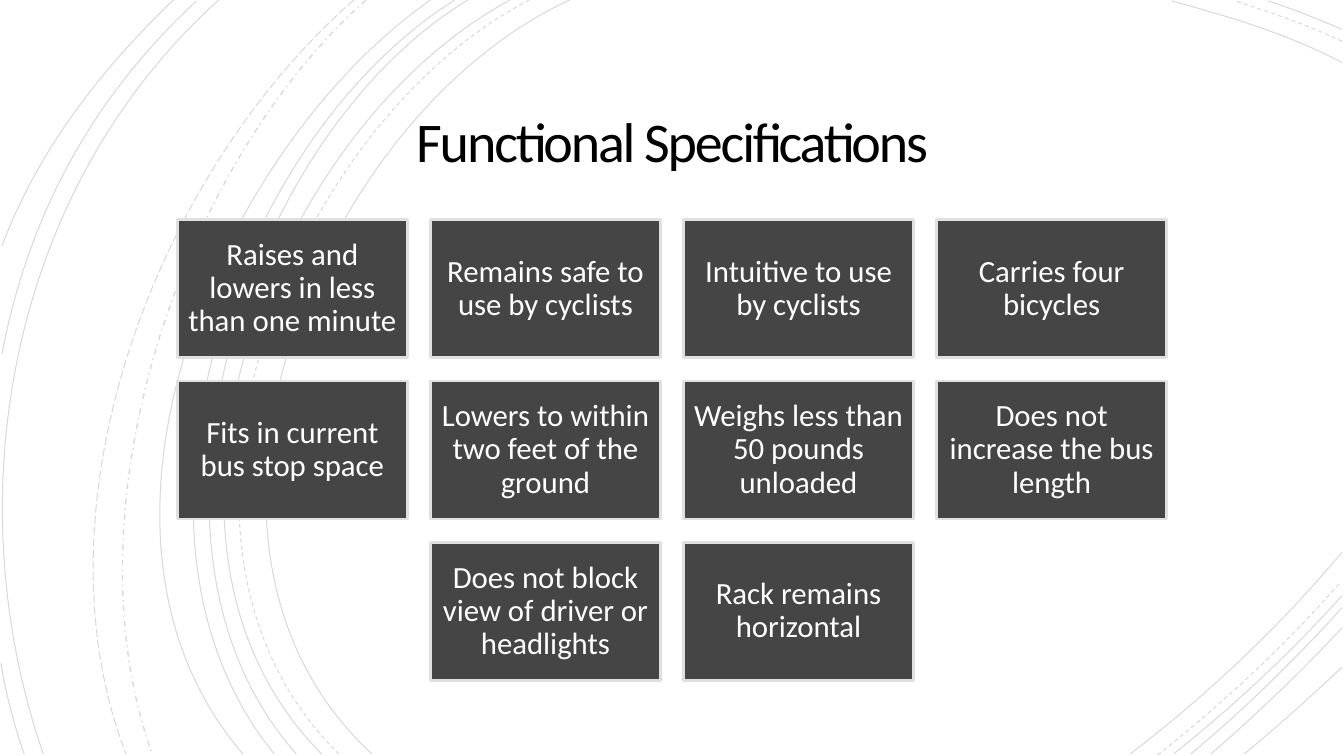
from dataclasses import dataclass

from lxml.etree import SubElement
from pptx import Presentation
from pptx.dml.color import RGBColor
from pptx.enum.dml import MSO_LINE
from pptx.enum.shapes import MSO_SHAPE
from pptx.enum.text import MSO_ANCHOR, MSO_AUTO_SIZE, PP_ALIGN
from pptx.oxml.ns import qn
from pptx.util import Inches, Pt


@dataclass(frozen=True)
class Theme:
    font: str = "Calibri"
    ink: RGBColor = RGBColor(0x00, 0x00, 0x00)
    card_fill: RGBColor = RGBColor(0x45, 0x45, 0x45)
    card_line: RGBColor = RGBColor(0xE0, 0xE0, 0xE0)
    card_text: RGBColor = RGBColor(0xFF, 0xFF, 0xFF)
    title_size: Pt = Pt(40)
    card_size: Pt = Pt(22)
    arc_opacity: int = 15


theme = Theme()


def format_text(shape, inset, line_spacing, size, color):
    frame = shape.text_frame
    frame.word_wrap = True
    frame.auto_size = MSO_AUTO_SIZE.NONE
    frame.vertical_anchor = MSO_ANCHOR.MIDDLE
    frame.margin_left = frame.margin_right = inset
    frame.margin_top = frame.margin_bottom = inset
    paragraph = frame.paragraphs[0]
    paragraph.alignment = PP_ALIGN.CENTER
    paragraph.line_spacing = line_spacing
    paragraph.font.name = theme.font
    paragraph.font.size = size
    paragraph.font.color.rgb = color


def add_arc(shapes, points, dash, width):
    """Draw one cubic curve from its start, two control points and end, in inches."""
    start, *others = [(Inches(x), Inches(y)) for x, y in points]
    builder = shapes.build_freeform(*start)
    builder.add_line_segments(others, close=False)
    arc = builder.convert_to_shape()
    segments = arc._element.xpath(".//a:lnTo")
    curve = SubElement(segments[0].getparent(), qn("a:cubicBezTo"))
    for segment in segments:
        curve.append(segment[0])
        segment.getparent().remove(segment)
    arc.shadow.inherit = False
    arc.fill.background()
    arc.line.color.rgb = theme.ink
    arc.line.width = Pt(width)
    arc.line.dash_style = dash
    line_color = arc._element.xpath(".//a:ln//a:srgbClr")[0]
    SubElement(line_color, qn("a:alpha")).set("val", str(theme.arc_opacity * 1000))


presentation = Presentation()
presentation.slide_width = Inches(13.33)
presentation.slide_height = Inches(7.5)
slide = presentation.slides.add_slide(presentation.slide_layouts[5])

# Background arcs, grouped by line style
arcs = {
    (MSO_LINE.SOLID, 0.75): [
        # left sweep
        [(5.65, 0), (3.15, 1.15), (1.43, 5.4), (3.69, 7.48)],
        [(5.06, 0), (2.7, 1.27), (1.1, 5.37), (3.19, 7.48)],
        [(4.64, 0), (2.44, 1.33), (1.1, 5.41), (2.94, 7.48)],
        [(4.51, 0), (2.31, 1.38), (0.97, 5.33), (2.72, 7.48)],
        [(4.27, 0), (2.17, 1.47), (0.53, 5.29), (2.41, 7.48)],
        [(2.17, 0), (0.11, 1.85), (-0.46, 4.9), (0.43, 7.48)],
        [(1.95, 0.01), (0.92, 0.96), (0.28, 2.14), (0.02, 3.51)],
        [(0.01, 6.58), (0.06, 6.89), (0.14, 7.19), (0.24, 7.48)],
        [(1.72, 0), (1, 0.69), (0.37, 1.5), (0.02, 2.44)],
        # top right corner
        [(13.31, 0.62), (12.78, 0.34), (12.18, 0.16), (11.62, 0.01)],
        [(13.31, 0.29), (13.07, 0.19), (12.83, 0.09), (12.58, 0.01)],
        # bottom right corner
        [(11.21, 7.48), (11.97, 6.9), (12.69, 6.22), (13.31, 5.48)],
        [(11.64, 7.48), (12.23, 7.01), (12.8, 6.48), (13.31, 5.91)],
        [(11.81, 7.48), (12.34, 7.04), (12.84, 6.55), (13.31, 6.03)],
        [(12.01, 7.48), (12.46, 7.09), (12.9, 6.67), (13.31, 6.23)],
        [(12.34, 7.48), (12.67, 7.21), (12.99, 6.92), (13.31, 6.62)],
    ],
    (MSO_LINE.DASH, 0.75): [
        [(5.25, 0), (2.85, 1.25), (1.23, 5.37), (3.36, 7.48)],
        [(13.31, 0.41), (12.97, 0.25), (12.6, 0.12), (12.25, 0.01)],
        [(11.48, 7.49), (12.13, 6.98), (12.75, 6.4), (13.3, 5.77)],
    ],
    (MSO_LINE.DASH_DOT, 1): [
        [(3.63, 0), (1.76, 1.66), (0.65, 5.09), (1.51, 7.48)],
    ],
    (MSO_LINE.LONG_DASH, 0.75): [
        [(3.51, 0), (1.57, 1.69), (0.29, 4.99), (1.25, 7.48)],
    ],
}
for (dash, width), curves in arcs.items():
    for points in curves:
        add_arc(slide.shapes, points, dash, width)

# Title
title = slide.shapes.title
title.left, title.top = Inches(1.92), Inches(0.87)
title.width, title.height = Inches(9.49), Inches(1.15)
title.text_frame.text = "Functional Specifications"
format_text(title, Inches(0.25), 0.85, theme.title_size, theme.ink)
title_run = title.text_frame.paragraphs[0].runs[0]
title_run._r.get_or_add_rPr().set("spc", "-150")

# Specification cards: every row is centred on the slide
card_rows = [
    ["Raises and lowers in less than one minute", "Remains safe to use by cyclists",
     "Intuitive to use by cyclists", "Carries four bicycles"],
    ["Fits in current bus stop space", "Lowers to within two feet of the ground",
     "Weighs less than 50 pounds unloaded", "Does not increase the bus length"],
    ["Does not block view of driver or headlights", "Rack remains horizontal"],
]
card_width, card_height, gap = Inches(2.28), Inches(1.37), Inches(0.23)
grid_top = Inches(2.18)
for row, card_texts in enumerate(card_rows):
    row_width = len(card_texts) * (card_width + gap) - gap
    row_left = (presentation.slide_width - row_width) // 2
    for column, text in enumerate(card_texts):
        card = slide.shapes.add_shape(
            MSO_SHAPE.RECTANGLE,
            row_left + column * (card_width + gap),
            grid_top + row * (card_height + gap),
            card_width, card_height)
        card.shadow.inherit = False
        card.fill.solid()
        card.fill.fore_color.rgb = theme.card_fill
        card.line.color.rgb = theme.card_line
        card.line.width = Pt(2)
        card.text_frame.text = text
        format_text(card, Inches(0.09), 0.9, theme.card_size, theme.card_text)

presentation.save("out.pptx")
